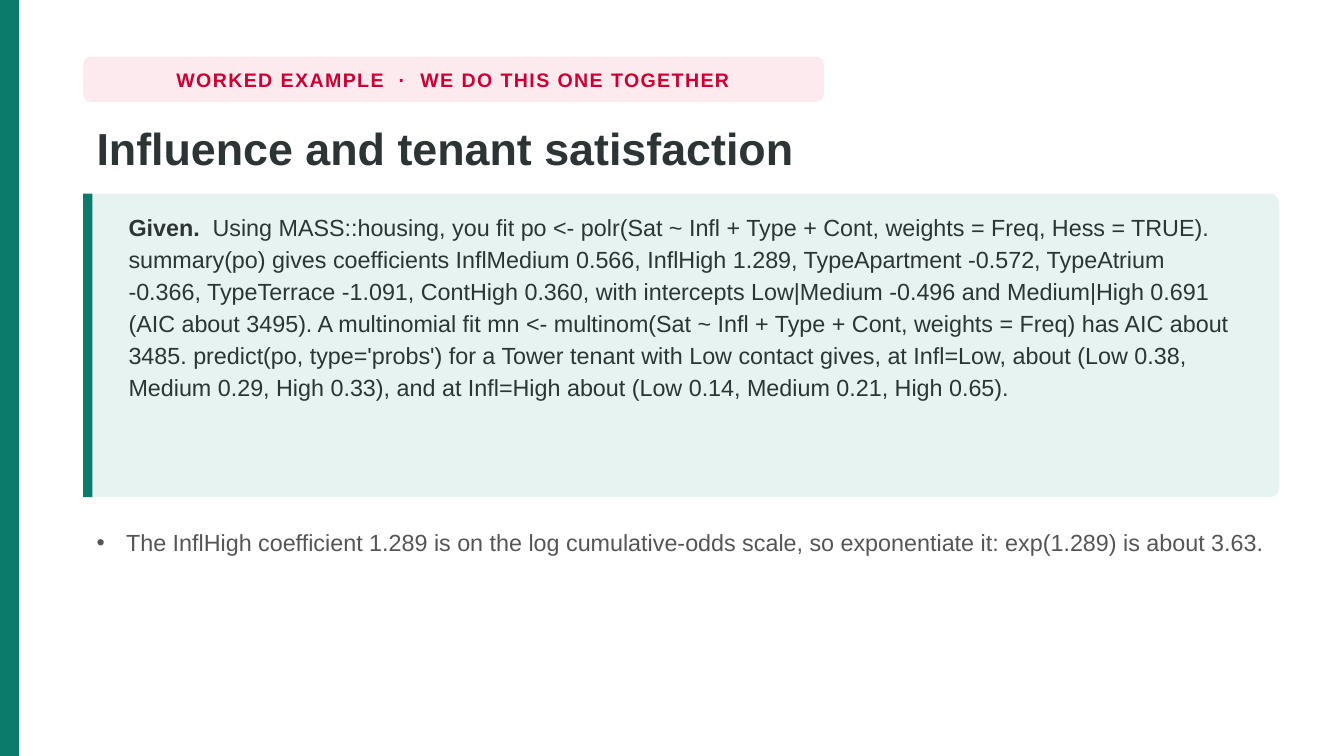
import dataclasses

import pptx
import pptx.dml.color
import pptx.enum.shapes
import pptx.enum.text
import pptx.oxml.ns
import pptx.util
from lxml import etree
from pptx.util import Cm, Pt

SHAPES = pptx.enum.shapes.MSO_SHAPE
ALIGN = pptx.enum.text.PP_ALIGN
ANCHOR = pptx.enum.text.MSO_ANCHOR


@dataclasses.dataclass(frozen=True)
class Theme:
    font: str = "Arial"
    green: str = "0B7B6B"
    mint: str = "E6F3F0"
    pink: str = "FDEAEF"
    red: str = "CC0033"
    ink: str = "2D3436"
    grey: str = "555555"
    label_size: float = 10.5
    title_size: float = 24
    body_size: float = 12.5


THEME = Theme()
LEFT, WIDTH = 1.57, 22.61
PANEL_TOP, PANEL_HEIGHT = 3.66, 5.74

LABEL = "WORKED EXAMPLE  ·  WE DO THIS ONE TOGETHER"
TITLE = "Influence and tenant satisfaction"
GIVEN = (
    "Using MASS::housing, you fit po <- polr(Sat ~ Infl + Type + Cont, "
    "weights = Freq, Hess = TRUE). summary(po) gives coefficients "
    "InflMedium 0.566, InflHigh 1.289, TypeApartment -0.572, "
    "TypeAtrium -0.366, TypeTerrace -1.091, ContHigh 0.360, with intercepts "
    "Low|Medium -0.496 and Medium|High 0.691 (AIC about 3495). "
    "A multinomial fit mn <- multinom(Sat ~ Infl + Type + Cont, "
    "weights = Freq) has AIC about 3485. predict(po, type='probs') for a "
    "Tower tenant with Low contact gives, at Infl=Low, about (Low 0.38, "
    "Medium 0.29, High 0.33), and at Infl=High about (Low 0.14, "
    "Medium 0.21, High 0.65)."
)
POINT = (
    "The InflHigh coefficient 1.289 is on the log cumulative-odds scale, "
    "so exponentiate it: exp(1.289) is about 3.63."
)


def set_attributes(target, values):
    for name, value in values.items():
        setattr(target, name, value)


def place(shape, left, top, width, height):
    set_attributes(shape, {"left": Cm(left), "top": Cm(top),
                           "width": Cm(width), "height": Cm(height)})


def add_block(slide, box, color, corner=None):
    """Add a plain filled rectangle, rounded when a corner is given."""
    kind = SHAPES.RECTANGLE if corner is None else SHAPES.ROUNDED_RECTANGLE
    shape = slide.shapes.add_shape(kind, *(Cm(value) for value in box))
    if corner is not None:
        shape.adjustments[0] = corner
    shape.shadow.inherit = False
    shape.fill.solid()
    shape.fill.fore_color.rgb = pptx.dml.color.RGBColor.from_string(color)
    shape.line.fill.background()
    return shape


def write_text(shape, runs, size, color, spacing=1.0, align=ALIGN.LEFT,
               anchor=ANCHOR.TOP, wrap=True):
    """Fill the first paragraph with (text, bold) runs and return it."""
    set_attributes(shape.text_frame, {
        "word_wrap": wrap, "vertical_anchor": anchor,
        "auto_size": pptx.enum.text.MSO_AUTO_SIZE.NONE})
    paragraph = shape.text_frame.paragraphs[0]
    set_attributes(paragraph, {"alignment": align, "line_spacing": spacing,
                               "space_before": Pt(0)})
    for text, bold in runs:
        run = paragraph.add_run()
        run.text = text
        set_attributes(run.font, {"name": THEME.font, "size": Pt(size),
                                  "bold": bold})
        run.font.color.rgb = pptx.dml.color.RGBColor.from_string(color)
    return paragraph


def add_bullet(paragraph, indent):
    properties = paragraph._p.get_or_add_pPr()
    properties.set("marL", str(Cm(indent)))
    properties.set("indent", str(-Cm(indent)))
    bullet = etree.SubElement(properties, pptx.oxml.ns.qn("a:buChar"))
    bullet.set("char", "•")


def add_label(slide):
    label = add_block(slide, (LEFT, 1.07, 14, 0.86), THEME.pink, 0.18)
    paragraph = write_text(label, [(LABEL, True)], THEME.label_size, THEME.red,
                           align=ALIGN.CENTER, anchor=ANCHOR.MIDDLE, wrap=False)
    paragraph.runs[0]._r.get_or_add_rPr().set("spc", "80")


def add_given_panel(slide):
    add_block(slide, (LEFT, PANEL_TOP, WIDTH, PANEL_HEIGHT), THEME.mint, 0.03)
    add_block(slide, (LEFT, PANEL_TOP, 0.18, PANEL_HEIGHT), THEME.green)
    text_box = slide.shapes.add_textbox(Cm(2.18), Cm(3.84), Cm(21.34), Cm(5.38))
    write_text(text_box, [("Given.  ", True), (GIVEN, False)],
               THEME.body_size, THEME.ink, spacing=1.14)


def main():
    presentation = pptx.Presentation()
    set_attributes(presentation, {"slide_width": Cm(25.4),
                                  "slide_height": Cm(14.29)})
    slide = presentation.slides.add_slide(presentation.slide_layouts[1])

    # Side band and label
    add_block(slide, (0, 0, 0.36, 14.29), THEME.green)
    add_label(slide)

    # Title
    title = slide.shapes.title
    place(title, LEFT, 2.13, WIDTH, 1.42)
    write_text(title, [(TITLE, True)], THEME.title_size, THEME.ink, spacing=1.02)

    # Given facts
    add_given_panel(slide)

    # Bullet list
    body = slide.placeholders[1]
    place(body, LEFT, 9.8, WIDTH, 1.24)
    paragraph = write_text(body, [(POINT, False)], THEME.body_size, THEME.grey,
                           spacing=1.12)
    add_bullet(paragraph, 0.56)

    presentation.save("out.pptx")


if __name__ == "__main__":
    main()
